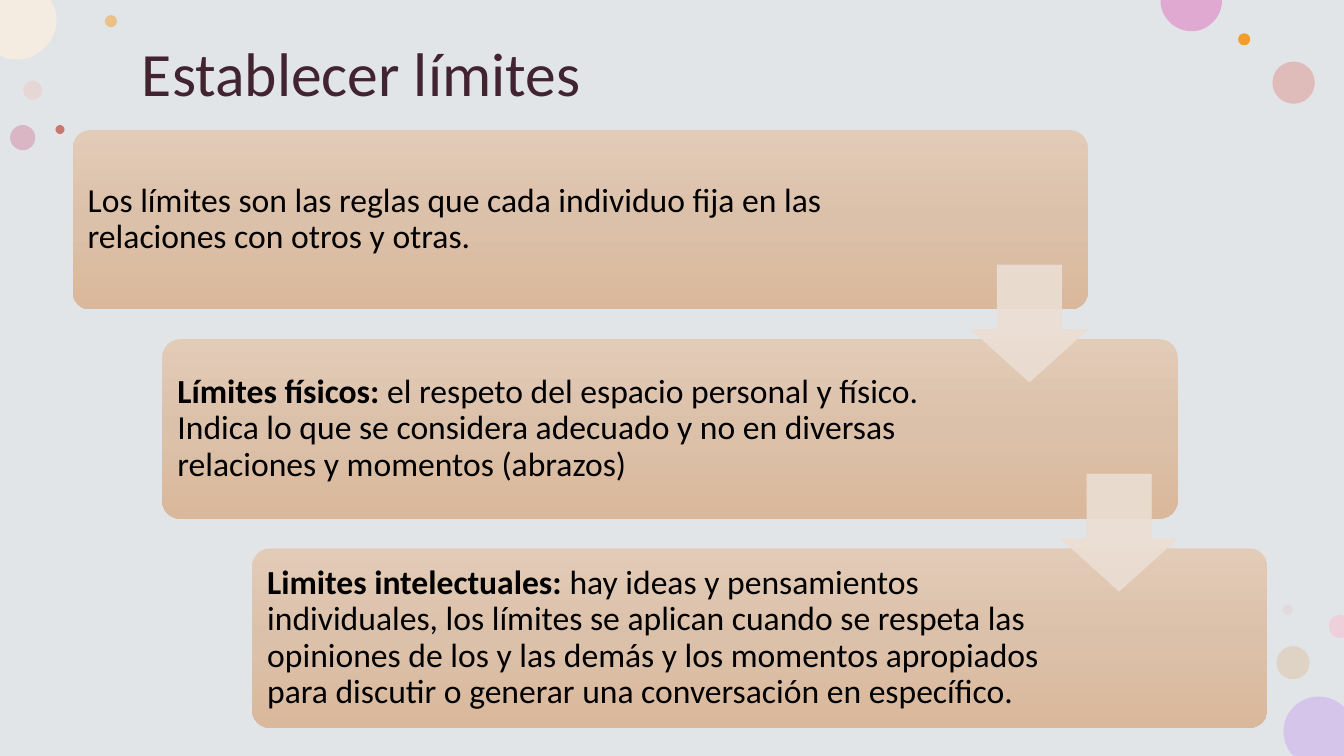
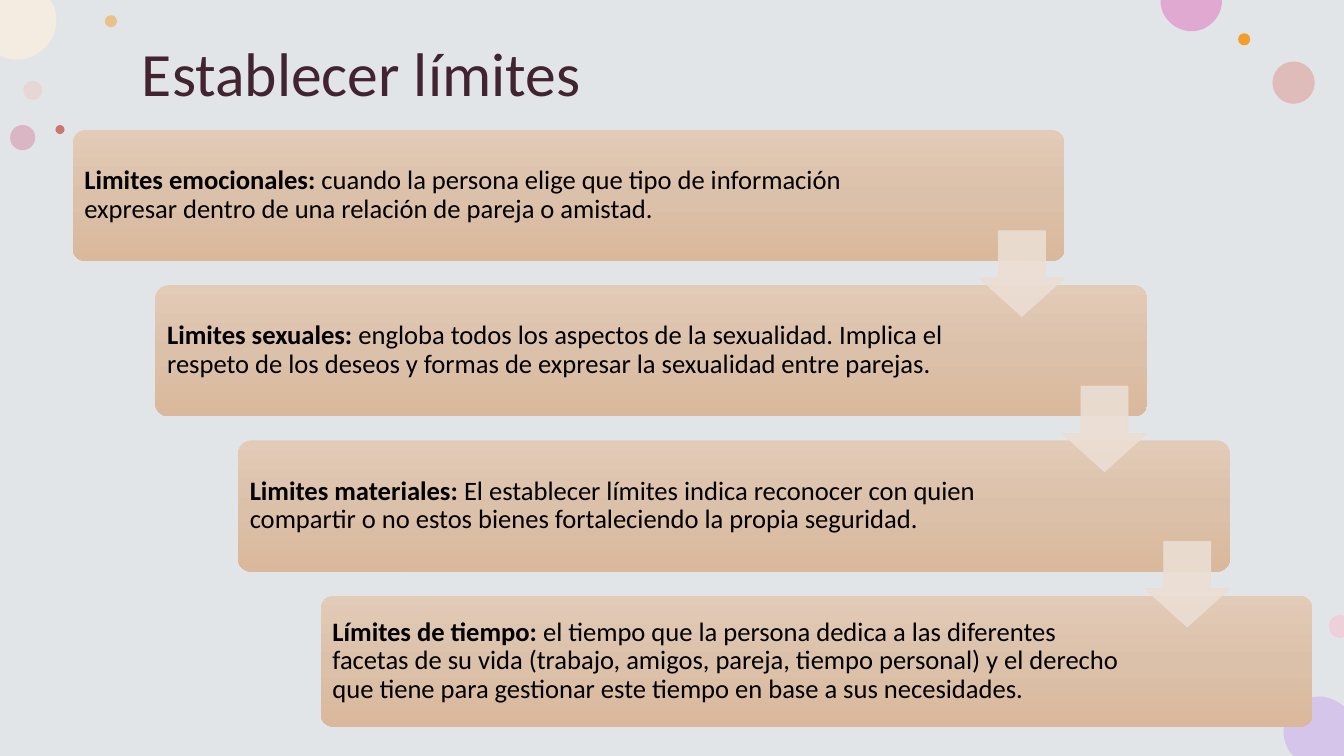
from copy import deepcopy
from dataclasses import dataclass

from lxml.etree import SubElement
from pptx import Presentation
from pptx.dml.color import RGBColor as Rgb
from pptx.enum.shapes import MSO_SHAPE as Kind
from pptx.enum.text import MSO_ANCHOR as Anchor, PP_ALIGN as Align
from pptx.oxml.ns import qn
from pptx.shapes.autoshape import Shape
from pptx.slide import Slide, SlideLayout as Layout
from pptx.text.text import TextFrame
from pptx.util import Inches, Pt

WIDE, HIGH = 13.33, 7.5
FONT = "Calibri"
BACK, PLUM, BLACK = "E2E5E8", "412430", "000000"
SAND, CLAY, TAN, CREAM = "E2CBB7", "DCC1AA", "DAB89B", "EBDED4"
LEFT, TOP, EXTRA = 0.72, 1.29, 0.23


@dataclass
class Dot:
    left: float
    top: float
    size: float
    tint: str
    alpha: int = 100


@dataclass
class Blob:
    tint: str
    start: tuple[float, float]
    moves: list[tuple[float, ...]]


@dataclass
class Step:
    head: str
    body: str


@dataclass
class Stair:
    wide: float
    high: float
    across: float
    down: float
    arrow: float
    lower: float
    inset: float
    room: float
    size: int
    steps: list[Step]

    def spot(self, rank: int) -> tuple[float, float]:
        part = rank / (len(self.steps) - 1)
        return LEFT + part * self.across, TOP + part * self.down


DOTS = [
    Dot(0.23, 0.8, 0.19, "EAC9C5", 50),
    Dot(1.04, 0.15, 0.12, "F39E29", 50),
    Dot(12.66, 6.41, 0.33, "DEC2A6", 50),
    Dot(0.1, 1.24, 0.25, "D389A2", 50),
    Dot(12.62, 0.61, 0.42, "DFADA9", 72),
    Dot(12.28, 0.33, 0.12, "F39E29"),
    Dot(12.72, 6, 0.1, "E3BEBE", 28),
    Dot(0.55, 1.24, 0.09, "CA776F"),
]

BLOBS = [
    Blob("D5C5EA", (13.08, 6.91), [
        (13.18, 6.91, 13.26, 6.95, 13.33, 7.01), (13.33, 7.5), (12.83, 7.5),
        (12.81, 7.48), (12.76, 7.42, 12.73, 7.34, 12.73, 7.26),
        (12.73, 7.06, 12.89, 6.91, 13.08, 6.91)]),
    Blob("F4EBE1", (0, 0), [
        (0.5, 0), (0.53, 0.05), (0.55, 0.09, 0.56, 0.14, 0.56, 0.2),
        (0.56, 0.41, 0.38, 0.59, 0.17, 0.59),
        (0.11, 0.59, 0.06, 0.58, 0.02, 0.56), (0, 0.55)]),
    Blob("DFA9D1", (11.52, 0), [
        (12.12, 0), (12.12, 0.01), (12.12, 0.17, 11.98, 0.31, 11.82, 0.31),
        (11.65, 0.31, 11.51, 0.17, 11.51, 0.01)]),
    Blob("EDD0DA", (13.29, 6.1), [
        (13.33, 6.11), (13.33, 6.32), (13.29, 6.33),
        (13.23, 6.33, 13.18, 6.28, 13.18, 6.21),
        (13.18, 6.15, 13.23, 6.1, 13.29, 6.1)]),
]

STAIRS = [
    Stair(10.07, 1.78, 1.78, 4.15, 1.16, 1.34, 0.1, 1.92, 24, [
        Step("", "Los límites son las reglas que cada individuo fija en las "
                 "relaciones con otros y otras."),
        Step("Límites físicos: ",
             "el respeto del espacio personal y físico. Indica lo que se "
             "considera adecuado y no en diversas relaciones y momentos "
             "(abrazos)"),
        Step("Limites intelectuales: ",
             "hay ideas y pensamientos individuales, los límites se aplican "
             "cuando se respeta las opiniones de los y las demás y los "
             "momentos apropiados para discutir o generar una conversación "
             "en específico."),
    ]),
    Stair(9.84, 1.3, 2.46, 4.62, 0.85, 1, 0.08, 1.52, 19, [
        Step("Limites emocionales: ",
             "cuando la persona elige que tipo de información expresar "
             "dentro de una relación de pareja o amistad."),
        Step("Limites sexuales: ",
             "engloba todos los aspectos de la sexualidad. Implica el "
             "respeto de los deseos y formas de expresar la sexualidad "
             "entre parejas."),
        Step("Limites materiales: ",
             "El establecer límites indica reconocer con quien compartir o "
             "no estos bienes fortaleciendo la propia seguridad."),
        Step("Límites de tiempo: ",
             "el tiempo que la persona dedica a las diferentes facetas de su "
             "vida (trabajo, amigos, pareja, tiempo personal) y el derecho "
             "que tiene para gestionar este tiempo en base a sus "
             "necesidades."),
    ]),
]


def tone(code: str) -> Rgb:
    return Rgb.from_string(code)


def fade(shape: Shape, alpha: int) -> None:
    for node in shape.element.spPr.iter(qn("a:srgbClr")):
        SubElement(node, qn("a:alpha")).set("val", str(alpha * 1000))


def paint(shape: Shape, tint: str) -> None:
    shape.shadow.inherit = False
    shape.fill.solid()
    shape.fill.fore_color.rgb = tone(tint)
    shape.line.fill.background()


def place(slide: Slide, kind: Kind, left: float, top: float,
          wide: float, high: float) -> Shape:
    return slide.shapes.add_shape(
        kind, Inches(left), Inches(top), Inches(wide), Inches(high))


def write(frame: TextFrame, parts: list[tuple[str, bool]],
          size: int, tint: str) -> None:
    frame.word_wrap = True
    frame.vertical_anchor = Anchor.MIDDLE
    para = frame.paragraphs[0]
    para.alignment = Align.LEFT
    para.line_spacing = 0.9
    for text, bold in parts:
        if text:
            run = para.add_run()
            run.text = text
            run.font.name = FONT
            run.font.size = Pt(size)
            run.font.bold = bold
            run.font.color.rgb = tone(tint)


def add_blob(slide: Slide, blob: Blob) -> None:
    ends = [(Inches(move[-2]), Inches(move[-1])) for move in blob.moves]
    pen = slide.shapes.build_freeform(*map(Inches, blob.start))
    pen.add_line_segments(ends, close=True)
    shape = pen.convert_to_shape()
    paint(shape, blob.tint)
    lines = list(shape.element.spPr.iter(qn("a:lnTo")))
    for line, move in zip(lines, blob.moves):
        if len(move) == 6:
            line.tag = qn("a:cubicBezTo")
            for spot, (x, y) in enumerate((move[:2], move[2:4])):
                point = deepcopy(line[-1])
                point.set("x", str(Inches(x) - shape.left))
                point.set("y", str(Inches(y) - shape.top))
                line.insert(spot, point)


def add_base(slide: Slide, layout: Layout) -> None:
    for holder in list(layout.placeholders):
        layout.shapes.element.remove(holder.element)
    paint(place(slide, Kind.RECTANGLE, 0, 0, WIDE, HIGH), BACK)
    for dot in DOTS:
        shape = place(slide, Kind.OVAL, dot.left, dot.top, dot.size, dot.size)
        paint(shape, dot.tint)
        if dot.alpha < 100:
            fade(shape, dot.alpha)
    for blob in BLOBS:
        add_blob(slide, blob)
    for shape in list(slide.shapes):
        layout.shapes.element.append(shape.element)


def add_title(slide: Slide, title: str) -> None:
    box = slide.shapes.add_textbox(
        Inches(1.31), Inches(0), Inches(5.82), Inches(1.52))
    write(box.text_frame, [(title, False)], 44, PLUM)


def add_card(slide: Slide, stair: Stair, rank: int, step: Step) -> None:
    card = place(slide, Kind.ROUNDED_RECTANGLE, *stair.spot(rank),
                 stair.wide, stair.high)
    card.adjustments[0] = 0.1
    card.shadow.inherit = False
    card.line.fill.background()
    card.fill.gradient()
    card.fill.gradient_angle = 270
    first = next(card.element.spPr.iter(qn("a:gs")))
    first.addnext(deepcopy(first))
    for rate, (stop, tint) in enumerate(
            zip(card.fill.gradient_stops, (SAND, CLAY, TAN))):
        stop.position = rate / 2
        stop.color.rgb = tone(tint)
    frame = card.text_frame
    frame.margin_left = frame.margin_top = Inches(stair.inset)
    frame.margin_bottom = Inches(stair.inset)
    frame.margin_right = Inches(stair.room + (EXTRA if rank else 0))
    write(frame, [(step.head, True), (step.body, False)], stair.size, BLACK)


def add_arrow(slide: Slide, stair: Stair, rank: int) -> None:
    left, top = stair.spot(rank)
    arrow = place(slide, Kind.DOWN_ARROW, left + stair.wide - stair.arrow,
                  top + stair.lower, stair.arrow, stair.arrow)
    arrow.adjustments[0] = 0.55
    arrow.adjustments[1] = 0.45
    paint(arrow, CREAM)
    arrow.line.color.rgb = tone(CREAM)
    arrow.line.width = Pt(0.5)
    fade(arrow, 90)


def main() -> None:
    deck = Presentation()
    deck.slide_width, deck.slide_height = Inches(WIDE), Inches(HIGH)
    layout = deck.slide_layouts[6]
    for page, stair in enumerate(STAIRS):
        slide = deck.slides.add_slide(layout)
        if page == 0:
            add_base(slide, layout)
        add_title(slide, "Establecer límites")
        for rank, step in enumerate(stair.steps):
            add_card(slide, stair, rank, step)
        for rank in range(len(stair.steps) - 1):
            add_arrow(slide, stair, rank)
    deck.save("out.pptx")


if __name__ == "__main__":
    main()
